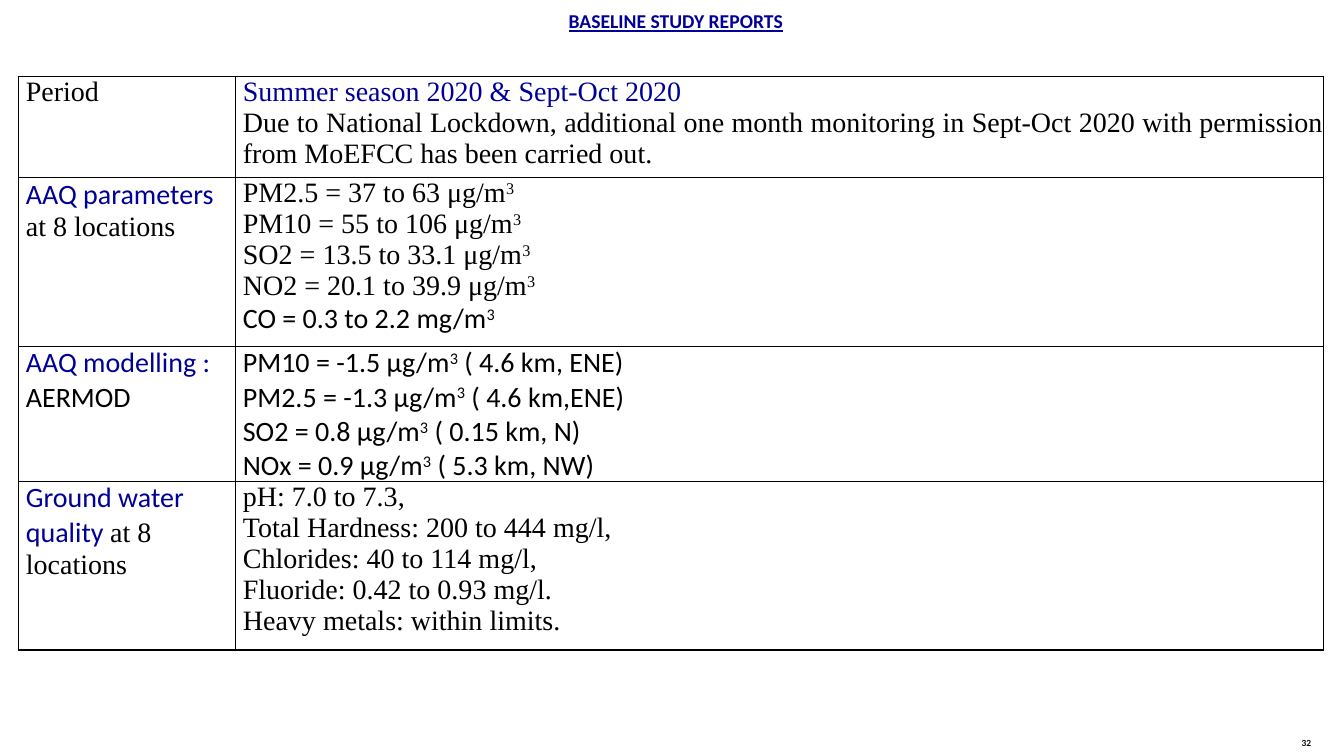
from lxml import etree
from pptx import Presentation
from pptx.dml.color import RGBColor
from pptx.enum import text
from pptx.oxml import ns
from pptx.util import Pt

NAVY = RGBColor(0x00, 0x00, 0x99)
BLACK = RGBColor(0x00, 0x00, 0x00)
SERIF = "Times New Roman"
SANS = "Calibri"
LEFT = text.PP_ALIGN.LEFT
MID = text.PP_ALIGN.CENTER
JUST = text.PP_ALIGN.JUSTIFY

ROWS = [
    (72, LEFT, JUST,
     [[("Period", SERIF, BLACK)]],
     [[("Summer season 2020 & Sept-Oct 2020", SERIF, NAVY)],
      [("Due to National Lockdown, additional one month monitoring in "
        "Sept-Oct 2020 with permission from MoEFCC has been carried out.",
        SERIF, BLACK)]]),
    (120.5, LEFT, LEFT,
     [[("AAQ parameters ", SANS, NAVY), ("at 8 locations", SERIF, BLACK)]],
     [[("PM2.5 = 37 to 63 μg/m^3", SERIF, BLACK)],
      [("PM10 = 55 to 106 μg/m^3", SERIF, BLACK)],
      [("SO2 = 13.5 to 33.1 μg/m^3", SERIF, BLACK)],
      [("NO2 = 20.1 to 39.9 μg/m^3", SERIF, BLACK)],
      [("CO = 0.3 to 2.2 mg/m^3", SANS, BLACK)]]),
    (96.5, LEFT, JUST,
     [[("AAQ modelling : ", SANS, NAVY), ("AERMOD", SANS, BLACK)]],
     [[("PM10 = -1.5 μg/m^3^ ( 4.6 km, ENE)", SANS, BLACK)],
      [("PM2.5 = -1.3 μg/m^3^ ( 4.6 km,ENE)", SANS, BLACK)],
      [("SO2 = 0.8 μg/m^3^ ( 0.15 km, N)", SANS, BLACK)],
      [("NOx = 0.9 μg/m^3^ ( 5.3 km, NW)", SANS, BLACK)]]),
    (120.5, LEFT, JUST,
     [[("Ground water quality ", SANS, NAVY),
       ("at 8 locations", SERIF, BLACK)]],
     [[("pH: 7.0 to 7.3,", SERIF, BLACK)],
      [("Total Hardness: 200 to 444 mg/l,", SERIF, BLACK)],
      [("Chlorides: 40 to 114 mg/l,", SERIF, BLACK)],
      [("Fluoride: 0.42 to 0.93 mg/l.", SERIF, BLACK)],
      [("Heavy metals: within limits.", SERIF, BLACK)]]),
]


def apply(item, form):
    for key, val in form.items():
        setattr(item, key, val)


def add_run(para, words, color, form):
    for i, part in enumerate(words.split("^")):
        run = para.add_run()
        run.text = part
        apply(run.font, form)
        run.font.color.rgb = color
        if i % 2:
            run.font._element.set("baseline", "30000")


def add_label(slide, words, place, pads, anchor, color, form):
    frame = slide.shapes.add_textbox(*map(Pt, place)).text_frame
    apply(frame, {"word_wrap": True, "vertical_anchor": anchor, **pads})
    para = frame.paragraphs[0]
    para.alignment = MID
    add_run(para, words, color, form)


def add_edges(cell):
    props = cell._tc.get_or_add_tcPr()
    for i, side in enumerate(("lnL", "lnR", "lnT", "lnB")):
        line = etree.Element(ns.qn("a:" + side), w=str(Pt(1)))
        fill = etree.SubElement(line, ns.qn("a:solidFill"))
        etree.SubElement(fill, ns.qn("a:srgbClr"), val=str(BLACK))
        props.insert(i, line)


def fill_cell(cell, lines, align):
    apply(cell, {"margin_left": Pt(5), "margin_right": 0,
                 "margin_top": 0, "margin_bottom": 0})
    cell.fill.background()
    add_edges(cell)
    frame = cell.text_frame
    for i, runs in enumerate(lines):
        para = frame.add_paragraph() if i else frame.paragraphs[0]
        para.alignment = align
        for words, face, color in runs:
            add_run(para, words, color, {"name": face, "size": Pt(20)})


def add_grid(slide):
    high = sum(row[0] for row in ROWS)
    area = map(Pt, (13.5, 54.75, 932, high))
    table = slide.shapes.add_table(len(ROWS), 2, *area).table
    apply(table, {"first_row": False, "horz_banding": False})
    for col, wide in zip(table.columns, (155, 777)):
        col.width = Pt(wide)
    for row, (high, *aligns, name, facts) in zip(table.rows, ROWS):
        row.height = Pt(high)
        for cell, lines, align in zip(row.cells, (name, facts), aligns):
            fill_cell(cell, lines, align)


def main():
    deck = Presentation()
    apply(deck, {"slide_width": Pt(960), "slide_height": Pt(540)})
    slide = deck.slides.add_slide(deck.slide_layouts[6])
    add_label(slide, "BASELINE STUDY REPORTS", (49, 0, 867.5, 36),
              {"margin_top": Pt(6.5)}, text.MSO_ANCHOR.TOP, NAVY,
              {"name": SANS, "size": Pt(14), "bold": True,
               "underline": True})
    add_grid(slide)
    add_label(slide, "32", (911, 521, 44.5, 19), {},
              text.MSO_ANCHOR.MIDDLE, BLACK,
              {"name": "Lato", "size": Pt(6), "bold": True})
    deck.save("out.pptx")


if __name__ == "__main__":
    main()
